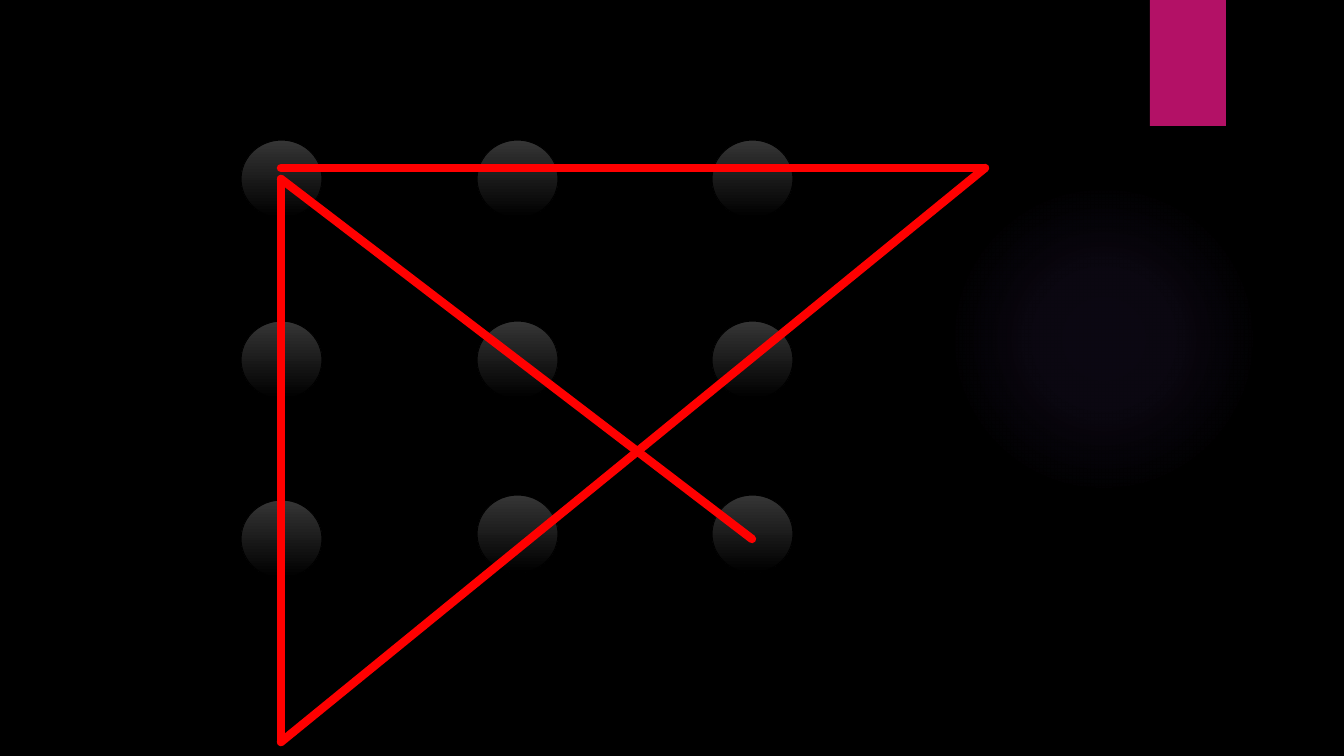
"""Build the nine-dot puzzle slide with its four-line solution."""
from dataclasses import dataclass
from itertools import pairwise

from pptx import Presentation, oxml
from pptx import util as u
from pptx.dml.color import RGBColor
from pptx.enum import shapes
from pptx.oxml import ns

EMU_PER_INCH = 914400
PX_PER_INCH = 100.8
DOT_WIDTH, DOT_HEIGHT = 81, 78
DOT_COLUMNS = (241, 477, 712)
DOT_ROWS = ((140, 140, 140), (321, 321, 321), (500, 495, 495))
SOLUTION = ((752, 539), (281, 179), (281, 742), (985, 168), (281, 168))
GLOW_STOPS = ((0, 7), (36, 6), (69, 0))


@dataclass(frozen=True)
class Box:
    """Hold a place and size in px."""
    left: int
    top: int
    width: int
    height: int


def px(length: int) -> u.Emu:
    """Turn px into EMU."""
    return u.Emu(round(length * EMU_PER_INCH / PX_PER_INCH))


def colour(value: str) -> RGBColor:
    """Turn a hex string into a colour."""
    return RGBColor.from_string(value)


def set_values(target, values: dict) -> None:
    """Set each named attribute on the target."""
    for name, value in values.items():
        setattr(target, name, value)


def add_plain(page, kind: shapes.MSO_SHAPE, box: Box):
    """Add a shape with no shadow and no outline."""
    shape = page.shapes.add_shape(
        kind, px(box.left), px(box.top), px(box.width), px(box.height))
    shape.shadow.inherit = False
    shape.line.fill.background()
    return shape


def add_glow(page, box: Box, tint: str) -> None:
    """Add a circle that fades out from its centre."""
    glow = add_plain(page, shapes.MSO_SHAPE.OVAL, box)
    glow.fill.background()
    stops = "".join(
        f'<a:gs pos="{place * 1000}"><a:srgbClr val="{tint}">'
        f'<a:alpha val="{alpha * 1000}"/></a:srgbClr></a:gs>'
        for place, alpha in GLOW_STOPS)
    gradient = oxml.parse_xml(
        f'<a:gradFill {ns.nsdecls("a")} rotWithShape="1">'
        f'<a:gsLst>{stops}</a:gsLst><a:path path="circle">'
        '<a:fillToRect l="50000" t="50000" r="50000" b="50000"/>'
        '</a:path></a:gradFill>')
    properties = glow._element.spPr
    properties.replace(properties.find(ns.qn("a:noFill")), gradient)


def add_tag(page, box: Box, tint: str) -> None:
    """Add the solid tag at the top edge."""
    tag = add_plain(page, shapes.MSO_SHAPE.RECTANGLE, box)
    tag.fill.solid()
    tag.fill.fore_color.rgb = colour(tint)


def add_dot(page, box: Box) -> None:
    """Add a puzzle dot shaded from grey down to black."""
    dot = add_plain(page, shapes.MSO_SHAPE.OVAL, box)
    dot.fill.gradient()
    dot.fill.gradient_angle = 270
    for stop, tint in zip(dot.fill.gradient_stops, ("353535", "000000")):
        stop.color.rgb = colour(tint)
    dot.line.color.rgb = colour("000000")
    dot.line.width = u.Pt(0.75)


def add_stroke(page, start: tuple[int, int], end: tuple[int, int]) -> None:
    """Add one round-ended line of the solution."""
    stroke = page.shapes.add_connector(
        shapes.MSO_CONNECTOR.STRAIGHT, *map(px, start + end))
    stroke.line.color.rgb = colour("FF0000")
    set_values(stroke.line, {"width": u.Pt(6)})
    properties = stroke._element.spPr
    properties.find(ns.qn("a:ln")).set("cap", "rnd")
    properties.append(oxml.parse_xml(f'<a:effectLst {ns.nsdecls("a")}/>'))


def main() -> None:
    """Draw the slide and save it."""
    deck = Presentation()
    set_values(deck, {"slide_width": px(1344), "slide_height": px(756)})
    page = deck.slides.add_slide(deck.slide_layouts[6])
    page.background.fill.solid()
    page.background.fill.fore_color.rgb = colour("000000")
    add_glow(page, Box(949, 184, 310, 310), "9B6BF2")
    add_tag(page, Box(1150, 0, 76, 126), "B31166")
    for tops in DOT_ROWS:
        for left, top in zip(DOT_COLUMNS, tops):
            add_dot(page, Box(left, top, DOT_WIDTH, DOT_HEIGHT))
    for start, end in pairwise(SOLUTION):
        add_stroke(page, start, end)
    deck.save("out.pptx")


if __name__ == "__main__":
    main()
